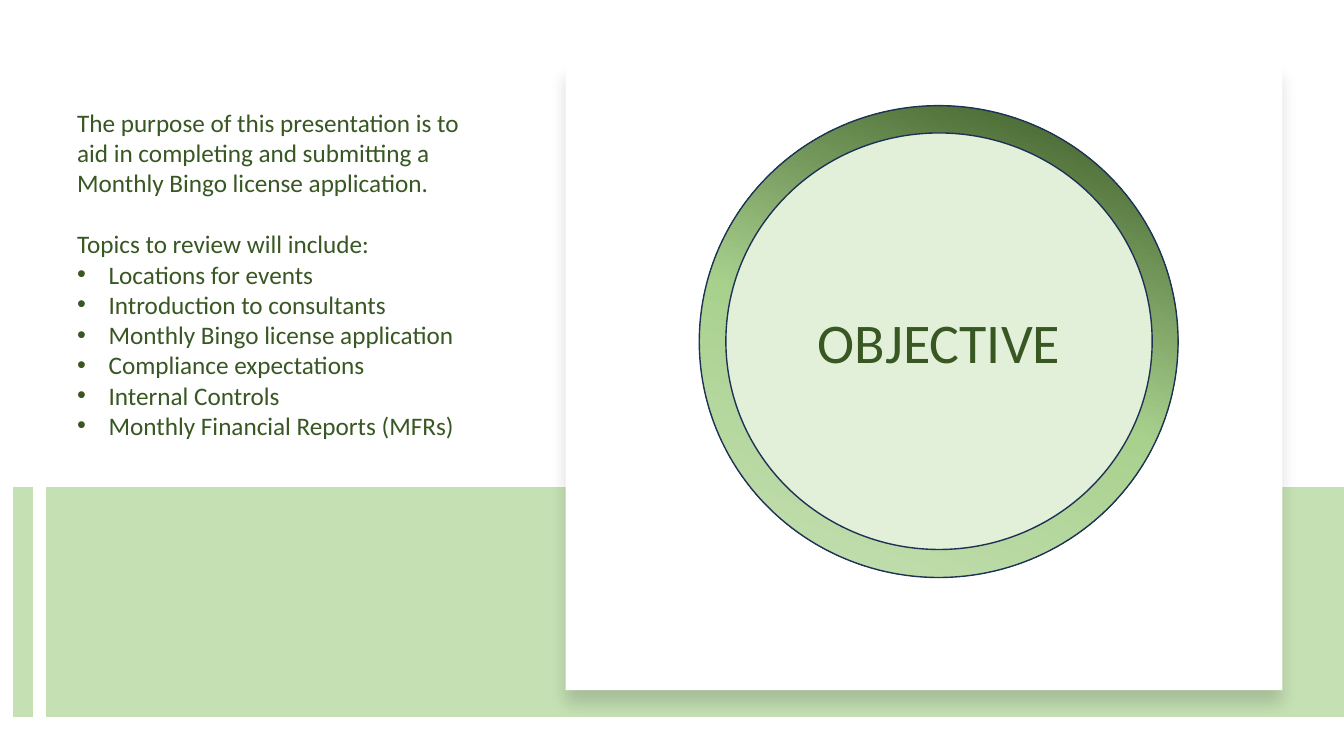
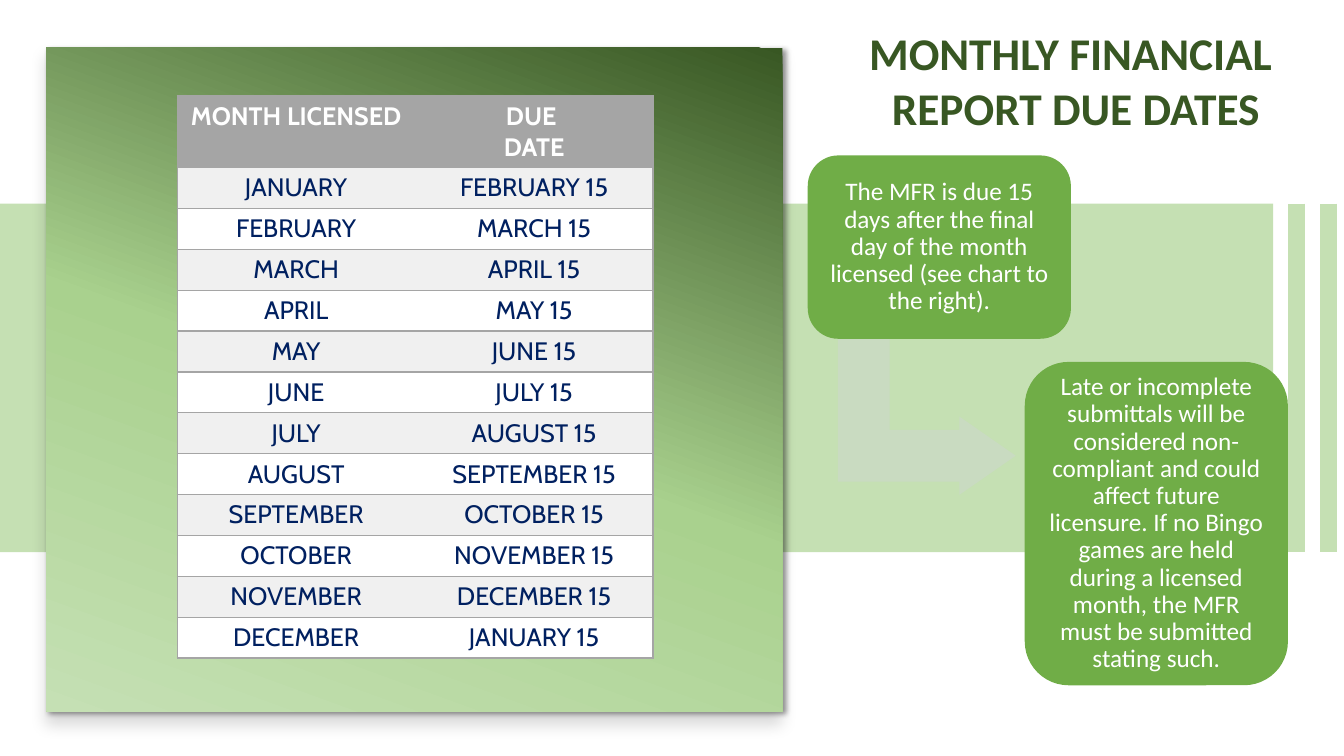
from copy import deepcopy

from lxml import etree
from pptx import Presentation
from pptx import util as u
from pptx.dml.color import RGBColor
from pptx.enum import shapes, text
from pptx.oxml.ns import qn

Pt = u.Pt
DARK_GREEN = RGBColor(0x38, 0x57, 0x23)
MID_GREEN = RGBColor(0xA9, 0xD1, 0x8E)
LIGHT_GREEN = RGBColor(0xC5, 0xE0, 0xB4)
BAND_GREEN = RGBColor(0xC5, 0xE0, 0xB3)
PALE_GREEN = RGBColor(0xE2, 0xF0, 0xD9)
NOTE_GREEN = RGBColor(0x70, 0xAD, 0x47)
ARROW_GREEN = RGBColor(0xC9, 0xDB, 0xC1)
OUTLINE_NAVY = RGBColor(0x1E, 0x32, 0x56)
TABLE_NAVY = RGBColor(0x00, 0x20, 0x60)
GREY = RGBColor(0xA5, 0xA5, 0xA5)
STRIPE = RGBColor(0xF0, 0xF0, 0xF0)
WHITE = RGBColor(0xFF, 0xFF, 0xFF)
GRADIENT = [(0, DARK_GREEN), (0.54, MID_GREEN), (1, LIGHT_GREEN)]
CARD_SHADOW = (15, 11, 10, 90)
PANEL_SHADOW = (40, 4, 3, 45)
KIND = shapes.MSO_SHAPE
CENTER = text.PP_ALIGN.CENTER
MIDDLE = text.MSO_ANCHOR.MIDDLE


def add_box(slide, kind, at, fill, line=None, shadow=None):
    """Add a shape; fill is a colour or a list of three gradient stops,
    shadow is (opacity %, blur, distance, angle)."""
    box = slide.shapes.add_shape(kind, *map(Pt, at))
    box.shadow.inherit = False
    if isinstance(fill, list):
        box.fill.gradient()
        box.fill.gradient_angle = 250
        stop_list = box._element.spPr.find(qn("a:gradFill")).find(qn("a:gsLst"))
        stop_list.append(deepcopy(stop_list[-1]))
        for stop, (position, color) in zip(box.fill.gradient_stops, fill):
            stop.position = position
            stop.color.rgb = color
    else:
        box.fill.solid()
        box.fill.fore_color.rgb = fill
    if line is None:
        box.line.fill.background()
    else:
        box.line.color.rgb = line
        box.line.width = Pt(1)
    if shadow:
        opacity, blur, distance, angle = shadow
        effects = box._element.spPr.find(qn("a:effectLst"))
        outer = etree.SubElement(
            effects, qn("a:outerShdw"), blurRad=str(Pt(blur)),
            dist=str(Pt(distance)), dir=str(angle * 60000), rotWithShape="0")
        tint = etree.SubElement(outer, qn("a:srgbClr"), val="000000")
        etree.SubElement(tint, qn("a:alpha"), val=str(opacity * 1000))
    return box


def write_text(frame, content, size=18, color=DARK_GREEN, font="Calibri",
               bold=False, align=CENTER, anchor=None, inset=None, spacing=1.0):
    """Fill a text frame, one paragraph per line of content."""
    frame.text = content
    frame.word_wrap = True
    if anchor is not None:
        frame.vertical_anchor = anchor
    if inset is not None:
        frame.margin_left = frame.margin_right = Pt(inset)
        frame.margin_top = frame.margin_bottom = Pt(inset)
    for para in frame.paragraphs:
        para.alignment = align
        para.line_spacing = spacing
        for span in para.runs:
            span.font.size = Pt(size)
            span.font.name = font
            span.font.bold = bold
            span.font.color.rgb = color


deck = Presentation()
deck.slide_width, deck.slide_height = Pt(960), Pt(540)
title_only = deck.slide_layouts[5]
objective = deck.slides.add_slide(title_only)
due_dates = deck.slides.add_slide(title_only)

# Green band and its side stripes
for slide, band, stripes, stripe_width in [
    (objective, (33, 348, 927, 164), [16.5], 14),
    (due_dates, (0, 145.5, 909.5, 249), [926, 949], 12),
]:
    add_box(slide, KIND.RECTANGLE, band, BAND_GREEN)
    top, bottom = band[1], band[1] + band[3]
    for x in stripes:
        stripe = slide.shapes.add_connector(
            shapes.MSO_CONNECTOR.STRAIGHT, Pt(x), Pt(top), Pt(x), Pt(bottom))
        stripe.line.color.rgb = BAND_GREEN
        stripe.line.width = Pt(stripe_width)
        etree.SubElement(stripe._element.spPr, qn("a:effectLst"))

# Objective: card, ring and topics
inner_circle = (518.5, 95, 304.5, 297.5)
add_box(objective, KIND.RECTANGLE, (404, 46, 512, 447), WHITE, shadow=CARD_SHADOW)
add_box(objective, KIND.OVAL, (499.5, 75.5, 342, 337), GRADIENT, line=OUTLINE_NAVY)
add_box(objective, KIND.OVAL, inner_circle, PALE_GREEN, line=OUTLINE_NAVY)

topics = objective.shapes.add_textbox(Pt(48), Pt(73), Pt(309), Pt(247)).text_frame
write_text(topics, """The purpose of this presentation is to aid in completing and submitting a Monthly Bingo license application.
Topics to review will include:
Locations for events
Introduction to consultants
Monthly Bingo license application
Compliance expectations
Internal Controls
Monthly Financial Reports (MFRs)""", align=text.PP_ALIGN.LEFT)
topics.paragraphs[1].space_before = Pt(22)
for para in topics.paragraphs[2:]:
    properties = para._p.get_or_add_pPr()
    properties.set("marL", str(Pt(22.5)))
    properties.set("indent", str(-Pt(22.5)))
    etree.SubElement(properties, qn("a:buFont"), typeface="Arial")
    etree.SubElement(properties, qn("a:buChar"), char="•")

# Due dates: panel and table
add_box(due_dates, KIND.RECTANGLE, (33, 31, 526, 477), WHITE, shadow=CARD_SHADOW)
add_box(due_dates, KIND.RECTANGLE, (33, 34, 526, 474), GRADIENT, shadow=PANEL_SHADOW)

months = ["JANUARY", "FEBRUARY", "MARCH", "APRIL", "MAY", "JUNE", "JULY", "AUGUST",
          "SEPTEMBER", "OCTOBER", "NOVEMBER", "DECEMBER"]
rows = [("MONTH LICENSED", "DUE \nDATE")]
rows += [(month, f"{following} 15")
         for month, following in zip(months, months[1:] + months[:1])]
table = due_dates.shapes.add_table(
    len(rows), 2, Pt(126.5), Pt(68.5), Pt(340), Pt(399)).table
for row_number, row in enumerate(rows):
    header = row_number == 0
    table.rows[row_number].height = Pt(51 if header else 29)
    for column, content in enumerate(row):
        cell = table.cell(row_number, column)
        cell.fill.solid()
        cell.fill.fore_color.rgb = (
            GREY if header else STRIPE if row_number % 2 else WHITE)
        write_text(cell.text_frame, content, font="Cabin", bold=header,
                   color=WHITE if header else TABLE_NAVY)
        inner_side = "lnL" if column else "lnR"
        for order, side in enumerate(["lnL", "lnR", "lnT", "lnB"]):
            border = etree.Element(qn(f"a:{side}"), w=str(Pt(1)))
            if side == inner_side:
                etree.SubElement(border, qn("a:noFill"))
            else:
                paint = etree.SubElement(border, qn("a:solidFill"))
                etree.SubElement(paint, qn("a:srgbClr"), val=str(GREY))
            cell._tc.get_or_add_tcPr().insert(order, border)

# Due dates: arrow and notes
arrow = add_box(due_dates, KIND.BENT_UP_ARROW, (606, 234, 112, 127), ARROW_GREEN)
arrow.rotation = 90
for index, adjustment in enumerate([0.33, 0.25, 0.36]):
    arrow.adjustments[index] = adjustment
for at, content in [
    ((577, 111, 188, 131),
     "The MFR is due 15 days after the final day of the month licensed "
     "(see chart to the right)."),
    ((732, 258.5, 188, 231),
     "Late or incomplete submittals will be considered non-compliant and could "
     "affect future licensure. If no Bingo games are held during a licensed month, "
     "the MFR must be submitted stating such."),
]:
    note = add_box(due_dates, KIND.ROUNDED_RECTANGLE, at, NOTE_GREEN)
    write_text(note.text_frame, content, color=WHITE, anchor=MIDDLE,
               inset=5, spacing=0.9)

# Titles, in front of everything else
for slide, at, content, size, bold, anchor in [
    (objective, inner_circle, "OBJECTIVE", 40, False, MIDDLE),
    (due_dates, (579.5, 14.5, 378, 96), "MONTHLY FINANCIAL \nREPORT DUE DATES",
     32.4, True, text.MSO_ANCHOR.TOP),
]:
    title = slide.shapes.title
    title.left, title.top, title.width, title.height = map(Pt, at)
    title.text_frame.auto_size = text.MSO_AUTO_SIZE.NONE
    write_text(title.text_frame, content, size=size, bold=bold, anchor=anchor)
    slide.shapes._spTree.append(title._element)

deck.save("out.pptx")
